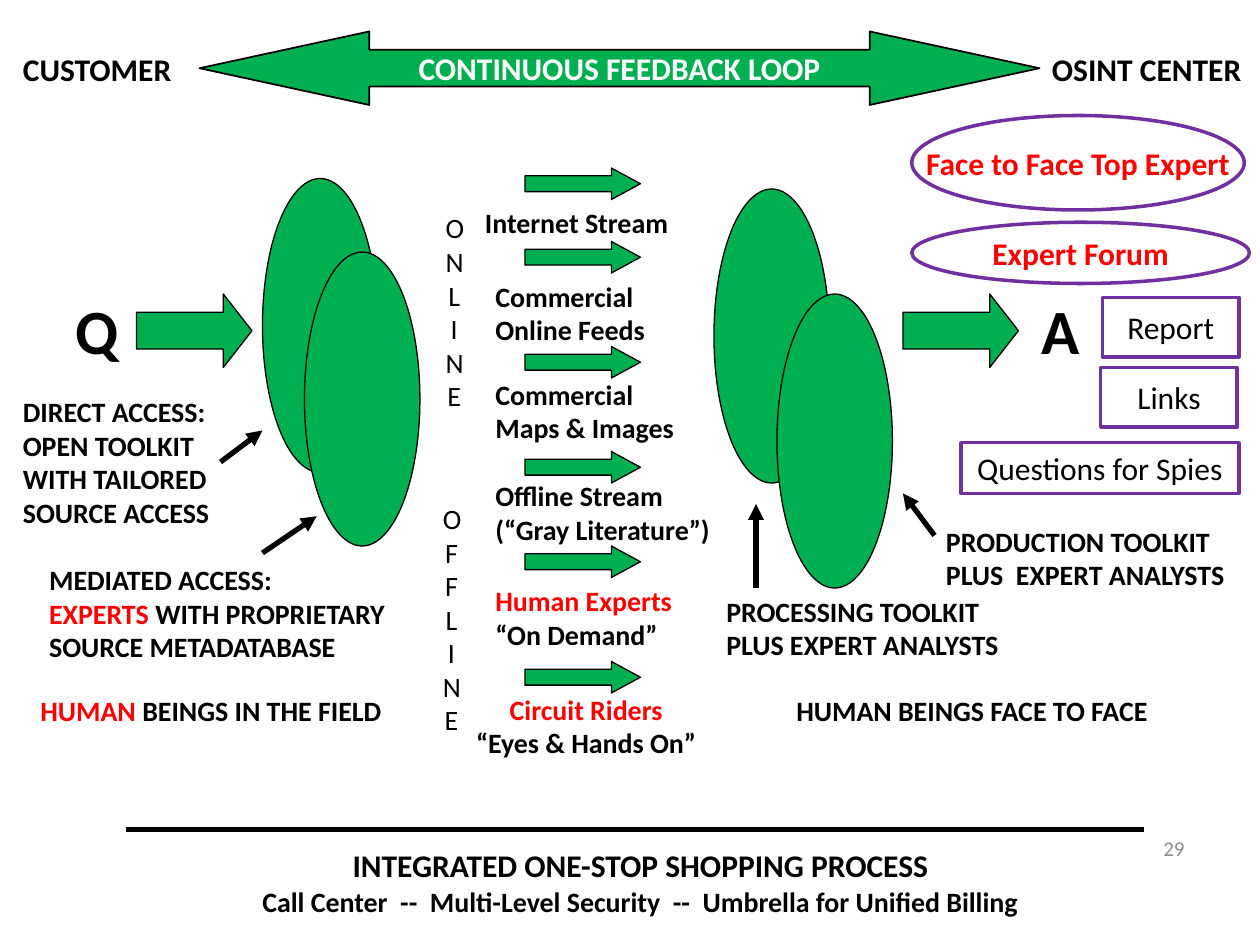
from lxml import etree
from pptx import Presentation
from pptx.dml.color import RGBColor
from pptx.enum import shapes, text
from pptx.oxml import ns
from pptx.util import Pt

GREEN = RGBColor(0x00, 0xB0, 0x50)
PURPLE = RGBColor(0x70, 0x30, 0xA0)
RED = RGBColor(0xFF, 0x00, 0x00)
BLACK = RGBColor(0, 0, 0)
WHITE = RGBColor(0xFF, 0xFF, 0xFF)
GRAY = RGBColor(0x8C, 0x8C, 0x8C)
KIND = shapes.MSO_SHAPE
LEFT, MID, RIGHT = text.PP_ALIGN.LEFT, text.PP_ALIGN.CENTER, text.PP_ALIGN.RIGHT


def put(par, words, size=16, bold=True, color=BLACK):
    run = par.add_run()
    run.text = words
    font = run.font
    font.name, font.size, font.bold = "Calibri", Pt(size), bold
    font.color.rgb = color


def fill(frame, lines, align=LEFT, **style):
    """Write lines; each is a string or a list of (words, colour) runs."""
    for i, line in enumerate(lines):
        par = frame.paragraphs[0] if i == 0 else frame.add_paragraph()
        par.alignment = align
        if isinstance(line, str):
            put(par, line, **style)
        else:
            for words, color in line:
                put(par, words, **{**style, "color": color})


def note(slide, box, lines, align=LEFT, **style):
    label = slide.shapes.add_textbox(*map(Pt, box))
    label.text_frame.word_wrap = True
    fill(label.text_frame, lines, align, **style)
    return label


def form(slide, kind, box, paint=GREEN, edge=BLACK, width=0.75, adjust=()):
    shape = slide.shapes.add_shape(kind, *map(Pt, box))
    shape.shadow.inherit = False
    if paint is None:
        shape.fill.background()
    else:
        shape.fill.solid()
        shape.fill.fore_color.rgb = paint
    shape.line.color.rgb = edge
    shape.line.width = Pt(width)
    for i, value in enumerate(adjust):
        shape.adjustments[i] = value
    return shape


def caption(shape, words, **style):
    """Centre one unwrapped line inside a shape."""
    frame = shape.text_frame
    frame.word_wrap = False
    frame.vertical_anchor = text.MSO_ANCHOR.MIDDLE
    fill(frame, [words], MID, size=18, **style)


def link(slide, start, end, head=True):
    line = slide.shapes.add_connector(
        shapes.MSO_CONNECTOR.STRAIGHT, *map(Pt, (*start, *end)))
    line.line.color.rgb = BLACK
    line.line.width = Pt(3)
    if head:
        tail = etree.SubElement(line.line._get_or_add_ln(), ns.qn("a:tailEnd"))
        tail.set("type", "triangle")
    etree.SubElement(line._element.spPr, ns.qn("a:effectLst"))


def banner(slide, x, y, w, h):
    loop = form(slide, KIND.LEFT_RIGHT_ARROW, (x + 114, y, 480, h),
                width=1, adjust=(0.5, 2.31))
    caption(loop, "CONTINUOUS FEEDBACK LOOP", color=WHITE)
    note(slide, (x + 6, y + 7, 108, 29), ["CUSTOMER"], size=18)
    note(slide, (x + w - 126, y + 7, 126, 29), ["OSINT CENTER"], size=18)


def lenses(slide, x, y, dx, dy):
    """Two overlapping ellipses, the second one shifted."""
    for i in range(2):
        form(slide, KIND.OVAL, (x + i * dx, y + i * dy, 66, 168))


def step(slide, x, y, h, adjust):
    form(slide, KIND.RIGHT_ARROW, (x, y, 66, h), adjust=(0.5, adjust))


def asking(slide, x, y):
    lenses(slide, x + 150, y, 24, 42)
    step(slide, x + 78, y + 66, 42, 0.39)
    note(slide, (x + 36, y + 61, 32, 50), ["Q"], size=36)
    note(slide, (x + 6, y + 120, 150, 85),
         ["DIRECT ACCESS:", "OPEN TOOLKIT WITH TAILORED SOURCE ACCESS"])
    note(slide, (x + 21, y + 216, 246, 66),
         ["MEDIATED ACCESS:",
          [("EXPERTS", RED), (" WITH PROPRIETARY SOURCE METADATABASE", BLACK)]])
    note(slide, (x + 16, y + 291, 214, 27),
         [[("HUMAN", RED), (" BEINGS IN THE FIELD", BLACK)]])
    link(slide, (x + 126, y + 162), (x + 150, y + 144))
    link(slide, (x + 150, y + 214), (x + 181, y + 193))


def streams(slide, x, y):
    # arrow top, label left, label top, alignment, lines
    feeds = [
        (0, 24, 18, LEFT, ["Internet Stream"]),
        (42, 30, 60, LEFT, ["Commercial", "Online Feeds"]),
        (102, 30, 116, LEFT, ["Commercial", "Maps & Images"]),
        (162, 30, 174, LEFT, ["Offline Stream", "(“Gray Literature”)"]),
        (216, 30, 234, LEFT, [[("Human Experts", RED)], "“On Demand”"]),
        (282, 17, 296, MID, [[("Circuit Riders", RED)], "“Eyes & Hands On”"]),
    ]
    for top, left, below, align, lines in feeds:
        step(slide, x + 54, y + top, 18, 0.92)
        note(slide, (x + left, y + below, 144, 24 * len(lines)), lines, align)
    # The narrow boxes break each word into a column of letters
    note(slide, (x + 1.5, y + 21, 24, 124), ["ONLINE"], MID, bold=False)
    note(slide, (x, y + 187, 24, 143), ["OFFLINE"], MID, bold=False)


def making(slide, x, y):
    lenses(slide, x, y, 36, 60)
    step(slide, x + 108, y + 60, 42, 0.39)
    note(slide, (x + 180, y + 55, 32, 50), ["A"], size=36)
    note(slide, (x, y + 228, 186, 46),
         ["PROCESSING TOOLKIT PLUS EXPERT ANALYSTS"])
    note(slide, (x + 125.5, y + 188, 186, 46),
         ["PRODUCTION TOOLKIT", "PLUS  EXPERT ANALYSTS"])
    note(slide, (x + 40, y + 285, 222, 27), ["HUMAN BEINGS FACE TO FACE"])
    link(slide, (x + 24, y + 228), (x + 24, y + 180))
    link(slide, (x + 126, y + 198), (x + 108, y + 174))


def answers(slide, x, y):
    results = [
        (KIND.OVAL, (0, 0, 190, 54), "Face to Face Top Expert", True),
        (KIND.OVAL, (0, 61, 193, 35), "Expert Forum", True),
        (KIND.RECTANGLE, (109, 104, 78, 34), "Report", False),
        (KIND.RECTANGLE, (108, 144, 78, 34), "Links", False),
        (KIND.RECTANGLE, (28, 187, 159, 29), "Questions for Spies", False),
    ]
    for kind, (dx, dy, w, h), words, expert in results:
        shape = form(slide, kind, (x + dx, y + dy, w, h), None, PURPLE, 2)
        caption(shape, words, bold=expert, color=RED if expert else BLACK)


def footer(slide, x, y, w):
    link(slide, (x, y), (x + w, y), head=False)
    title = slide.shapes.title
    title.left, title.top, title.width, title.height = map(
        Pt, (x + 18, y + 6, 540, 48))
    frame = title.text_frame
    frame.auto_size = text.MSO_AUTO_SIZE.NONE
    frame.vertical_anchor = text.MSO_ANCHOR.TOP
    fill(frame, ["INTEGRATED ONE-STOP SHOPPING PROCESS"], MID, size=18)
    frame.paragraphs[0]._p.get_or_add_pPr().set("marL", str(Pt(12)))
    par = frame.add_paragraph()
    par.alignment = MID
    put(par, "Call Center  --  Multi-Level Security  --  "
             "Umbrella for Unified Billing")
    page = note(slide, (x + w - 138, y - 4, 168, 29), ["29"], RIGHT,
                size=12, bold=False, color=GRAY)
    page.text_frame.vertical_anchor = text.MSO_ANCHOR.MIDDLE


def main():
    deck = Presentation()
    deck.slide_width, deck.slide_height = Pt(720), Pt(540)
    slide = deck.slides.add_slide(deck.slide_layouts[5])
    banner(slide, 0, 18, 720, 42)
    asking(slide, 0, 102)
    streams(slide, 246, 96)
    making(slide, 408, 108)
    answers(slide, 521, 66)
    footer(slide, 72, 474, 582)
    deck.save("out.pptx")


if __name__ == "__main__":
    main()
